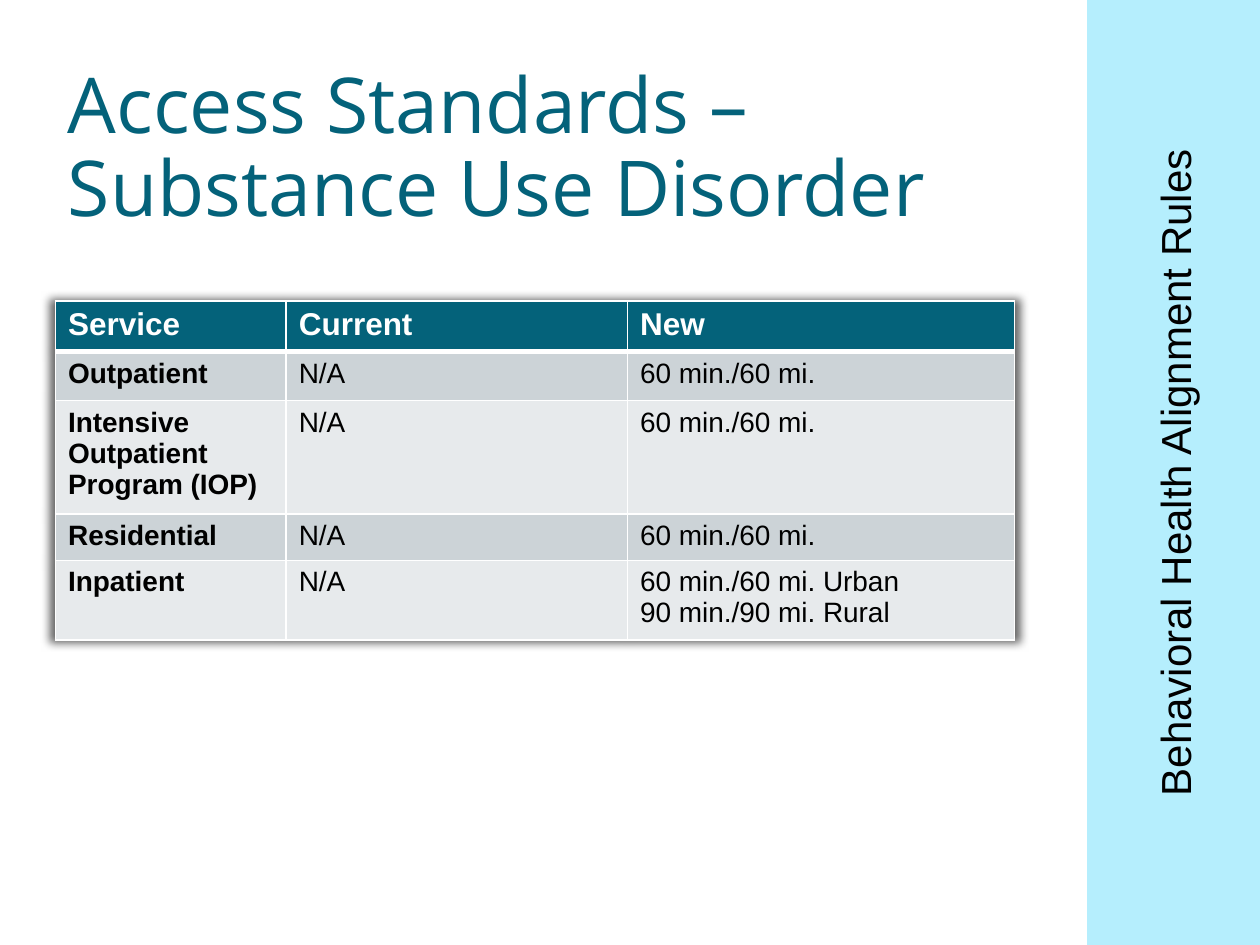
from lxml import etree
from pptx import Presentation
from pptx import util as u
from pptx.dml.color import RGBColor
from pptx.enum import shapes, text
from pptx.oxml.ns import qn

# Content
TITLE = "Access Standards – Substance Use Disorder"
SIDEBAR = "Behavioral Health Alignment Rules"
ROWS = [
    ("Service", "Current", "New"),
    ("Outpatient", "N/A", "60 min./60 mi."),
    ("Intensive Outpatient Program (IOP)", "N/A", "60 min./60 mi."),
    ("Residential", "N/A", "60 min./60 mi."),
    ("Inpatient", "N/A", "60 min./60 mi. Urban\n90 min./90 mi. Rural"),
]
COLUMN_WIDTHS = (4.65, 6.88, 7.8)
ROW_HEIGHTS = (0.99, 0.99, 2.13, 0.89, 1.52)
TEAL, WHITE, BLACK, SKY = "04627A", "FFFFFF", "000000", "B5EEFD"
BANDS = ("E7EAEC", "CCD3D7")


def color(value):
    return RGBColor.from_string(value)


def format_text(frame, font, size, ink, bold=False):
    for para in frame.paragraphs:
        for span in para.runs:
            span.font.name = font
            span.font.size = u.Pt(size)
            span.font.bold = bold
            span.font.color.rgb = color(ink)


def set_borders(cell, bottom):
    properties = cell._tc.get_or_add_tcPr()
    widths = {"a:lnL": 1, "a:lnR": 1, "a:lnT": 1, "a:lnB": bottom}
    for position, (side, width) in enumerate(widths.items()):
        line = etree.Element(qn(side), w=str(u.Pt(width)))
        fill = etree.SubElement(line, qn("a:solidFill"))
        etree.SubElement(fill, qn("a:srgbClr"), val=WHITE)
        properties.insert(position, line)


def add_table_shadow(table):
    effects = etree.Element(qn("a:effectLst"))
    shadow = etree.SubElement(
        effects, qn("a:outerShdw"), blurRad="63500", dist="0",
        sx="101000", sy="101000", algn="ctr", rotWithShape="0")
    tint = etree.SubElement(shadow, qn("a:srgbClr"), val=BLACK)
    etree.SubElement(tint, qn("a:alpha"), val="60000")
    table._tbl.tblPr.insert(0, effects)


deck = Presentation()
deck.slide_width, deck.slide_height = u.Cm(25.4), u.Cm(19.05)
page = deck.slides.add_slide(deck.slide_layouts[6])

# Title
title = page.shapes.add_textbox(u.Cm(1.12), u.Cm(1.19), u.Cm(21.89), u.Cm(3.68))
frame = title.text_frame
frame.word_wrap = True
frame.vertical_anchor = text.MSO_ANCHOR.MIDDLE
frame.text = TITLE
frame.paragraphs[0].line_spacing = 0.9
format_text(frame, "Open Sans", 44, TEAL)

# Table of access standards
table = page.shapes.add_table(
    len(ROWS), len(COLUMN_WIDTHS), u.Cm(1.12), u.Cm(6.07),
    u.Cm(sum(COLUMN_WIDTHS)), u.Cm(sum(ROW_HEIGHTS))).table
for column, width in zip(table.columns, COLUMN_WIDTHS):
    column.width = u.Cm(width)
for r, (row, height) in enumerate(zip(ROWS, ROW_HEIGHTS)):
    table.rows[r].height = u.Cm(height)
    header = r == 0
    for c, words in enumerate(row):
        cell = table.cell(r, c)
        cell.text_frame.text = words
        cell.fill.solid()
        cell.fill.fore_color.rgb = color(TEAL if header else BANDS[r % 2])
        format_text(cell.text_frame, "Arial", 18 if header else 16,
                    WHITE if header else BLACK, header or c == 0)
        set_borders(cell, 3 if header else 1)
add_table_shadow(table)

# Sidebar, turned to read upwards
sidebar = page.shapes.add_shape(
    shapes.MSO_SHAPE.RECTANGLE, u.Cm(14.15), u.Cm(7.79), u.Cm(19.05), u.Cm(3.48))
sidebar.rotation = 270
sidebar.shadow.inherit = False
sidebar.fill.solid()
sidebar.fill.fore_color.rgb = color(SKY)
sidebar.line.color.rgb = color(SKY)
sidebar.line.width = u.Pt(1)
frame = sidebar.text_frame
frame.word_wrap = True
frame.vertical_anchor = text.MSO_ANCHOR.MIDDLE
frame.text = SIDEBAR
frame.paragraphs[0].alignment = text.PP_ALIGN.CENTER
format_text(frame, "Arial", 24, BLACK)

deck.save("out.pptx")
